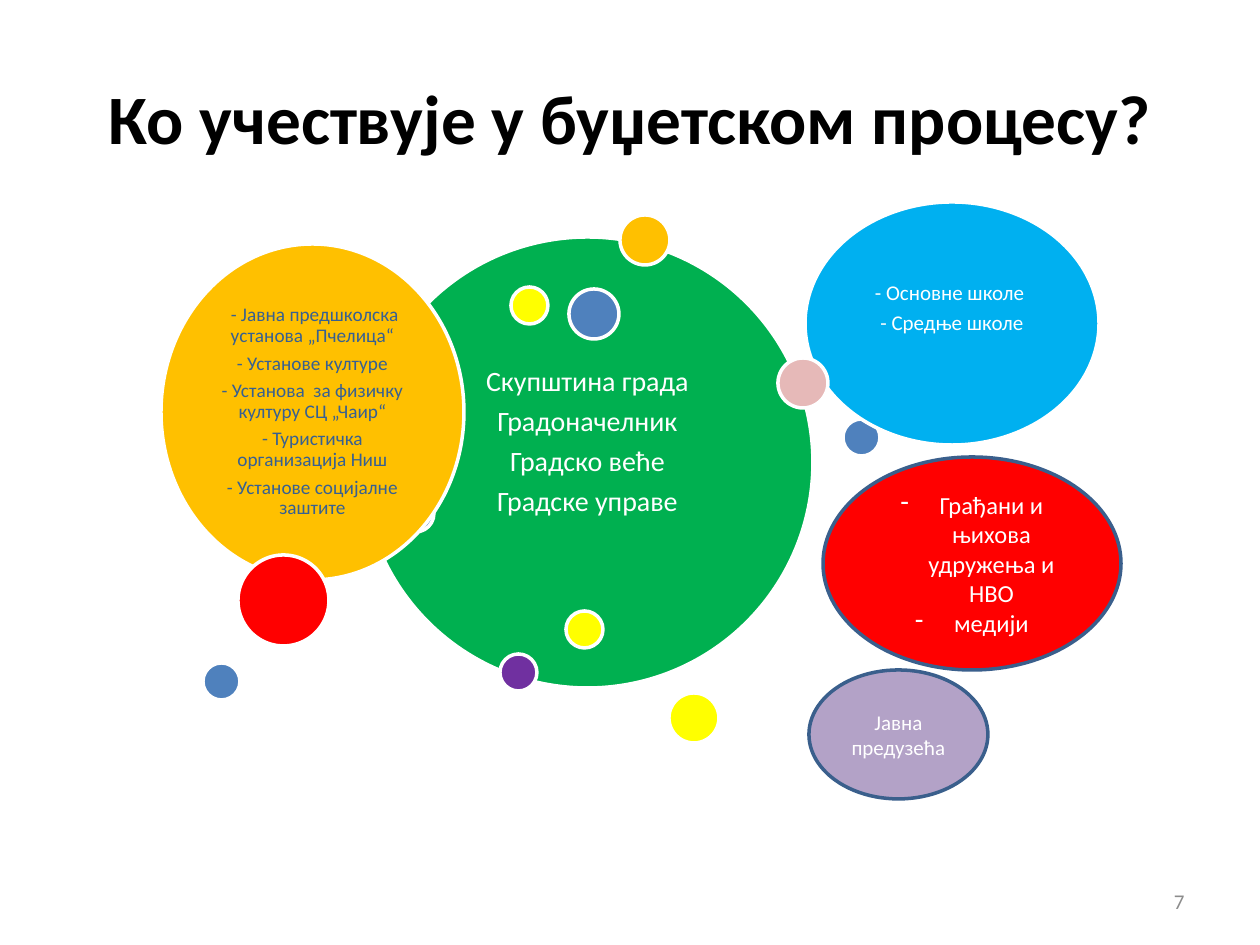
import pptx
import pptx.dml.color
import pptx.enum.shapes
import pptx.enum.text
import pptx.util
import lxml.etree

RGBColor = pptx.dml.color.RGBColor
ALIGN = pptx.enum.text.PP_ALIGN

WHITE = RGBColor(0xFF, 0xFF, 0xFF)
BLACK = RGBColor(0x00, 0x00, 0x00)
GRAY = RGBColor(0x8C, 0x8C, 0x8C)
GREEN = RGBColor(0x00, 0xB0, 0x50)
ORANGE = RGBColor(0xFF, 0xC0, 0x00)
PURPLE = RGBColor(0x70, 0x30, 0xA0)
BLUE = RGBColor(0x4F, 0x81, 0xBD)
YELLOW = RGBColor(0xFF, 0xFF, 0x00)
RED = RGBColor(0xFF, 0x00, 0x00)
SKY = RGBColor(0x00, 0xB0, 0xF0)
PINK = RGBColor(0xE6, 0xB9, 0xB8)
LILAC = RGBColor(0xB3, 0xA2, 0xC7)
NAVY = RGBColor(0x37, 0x60, 0x92)
OUTLINE = RGBColor(0x3A, 0x5F, 0x8C)

FONT = "Calibri"
PX = 914400 / 126
SMALL, MEDIUM, LARGE = 37, 50, 91  # dot diameters

# Content: text, left, top, width, height, size, colour, alignment, bold
LABELS = [
    ("Ко учествује у буџетском процесу?", 63, 38, 1134, 157, 39.6, BLACK, ALIGN.CENTER, True),
    ("7", 903, 876, 294, 50, 12, GRAY, ALIGN.RIGHT, False),
]

COUNCIL = dict(
    box=(362, 237, 451, 451), fill=GREEN, size=16, inset=9, lift=40,
    lines=["Скупштина града", "Градоначелник", "Градско веће", "Градске управе"])
INSTITUTIONS = dict(
    box=(161, 244, 303, 336), fill=ORANGE, size=11, color=NAVY, inset=6,
    lines=[" - Јавна предшколска установа „Пчелица“", "- Установе културе",
           "- Установа  за физичку културу СЦ „Чаир“",
           "- Туристичка организација Ниш", "- Установе социјалне заштите"])
SCHOOLS = dict(
    box=(805, 202, 294, 243), fill=SKY, size=12, inset=6, lift=30,
    lines=["- Основне школе ", "- Средње школе"])
CITIZENS = dict(
    box=(823, 457, 298, 213), fill=RED, line=OUTLINE, size=14, bullet="-",
    lines=["Грађани и њихова удружења и НВО", "медији"])
COMPANIES = dict(
    box=(809, 670, 179, 129), fill=LILAC, line=OUTLINE, size=12,
    lines=["Јавна предузећа"])

# Dots: left, top, diameter, fill
DOTS_BEHIND = [
    (620, 215, MEDIUM, ORANGE), (500, 654, SMALL, PURPLE), (843, 419, SMALL, BLUE),
    (669, 693, MEDIUM, YELLOW), (511, 287, SMALL, YELLOW), (397, 495, SMALL, BLUE)]
DOTS_MIDDLE = [(569, 289, MEDIUM, BLUE), (238, 555, LARGE, RED)]
DOTS_FRONT = [
    (778, 358, MEDIUM, PINK), (203, 663, SMALL, BLUE), (566, 611, SMALL, YELLOW)]


def px(length):
    return pptx.util.Emu(round(length * PX))


def set_font(paragraph, size, color, bold=False):
    paragraph.font.name = FONT
    paragraph.font.size = pptx.util.Pt(size)
    paragraph.font.color.rgb = color
    paragraph.font.bold = bold


def add_label(slide, text, left, top, width, height, size, color, align, bold):
    frame = slide.shapes.add_textbox(px(left), px(top), px(width), px(height)).text_frame
    frame.word_wrap = True
    frame.vertical_anchor = pptx.enum.text.MSO_ANCHOR.MIDDLE
    paragraph = frame.paragraphs[0]
    paragraph.text = text
    paragraph.alignment = align
    set_font(paragraph, size, color, bold)


def add_ellipse(slide, box, fill, line=WHITE):
    shape = slide.shapes.add_shape(
        pptx.enum.shapes.MSO_SHAPE.OVAL, *(px(length) for length in box))
    shape.shadow.inherit = False
    shape.fill.solid()
    shape.fill.fore_color.rgb = fill
    shape.line.color.rgb = line
    shape.line.width = pptx.util.Pt(2)
    return shape


def add_bullet(paragraph, character):
    properties = paragraph._p.get_or_add_pPr()
    properties.set("marL", str(px(39)))
    properties.set("indent", str(-px(39)))
    bullet = lxml.etree.SubElement(properties, pptx.oxml.ns.qn("a:buChar"))
    bullet.set("char", character)


def add_bubble(slide, box, fill, lines, size, color=WHITE, line=WHITE,
               inset=None, lift=0, bullet=None):
    frame = add_ellipse(slide, box, fill, line).text_frame
    frame.word_wrap = True
    frame.vertical_anchor = pptx.enum.text.MSO_ANCHOR.MIDDLE
    if inset:
        frame.margin_left = frame.margin_right = frame.margin_top = px(inset)
        frame.margin_bottom = px(inset + lift)
    for index, text in enumerate(lines):
        paragraph = frame.add_paragraph() if index else frame.paragraphs[0]
        paragraph.text = text
        paragraph.alignment = ALIGN.CENTER
        if inset:
            paragraph.line_spacing = 0.9
            paragraph.space_after = pptx.util.Pt(size * 0.35)
        if bullet:
            add_bullet(paragraph, bullet)
        set_font(paragraph, size, color)


def add_dots(slide, dots):
    for left, top, diameter, fill in dots:
        add_ellipse(slide, (left, top, diameter, diameter), fill)


def main():
    presentation = pptx.Presentation()
    presentation.slide_width = px(1260)
    presentation.slide_height = px(945)
    slide = presentation.slides.add_slide(presentation.slide_layouts[6])

    # Title and page number
    for label in LABELS:
        add_label(slide, *label)

    # Bubbles and dots, from back to front
    add_bubble(slide, **COUNCIL)
    add_dots(slide, DOTS_BEHIND)
    add_bubble(slide, **INSTITUTIONS)
    add_dots(slide, DOTS_MIDDLE)
    add_bubble(slide, **SCHOOLS)
    add_dots(slide, DOTS_FRONT)
    add_bubble(slide, **CITIZENS)
    add_bubble(slide, **COMPANIES)

    presentation.save("out.pptx")


if __name__ == "__main__":
    main()
